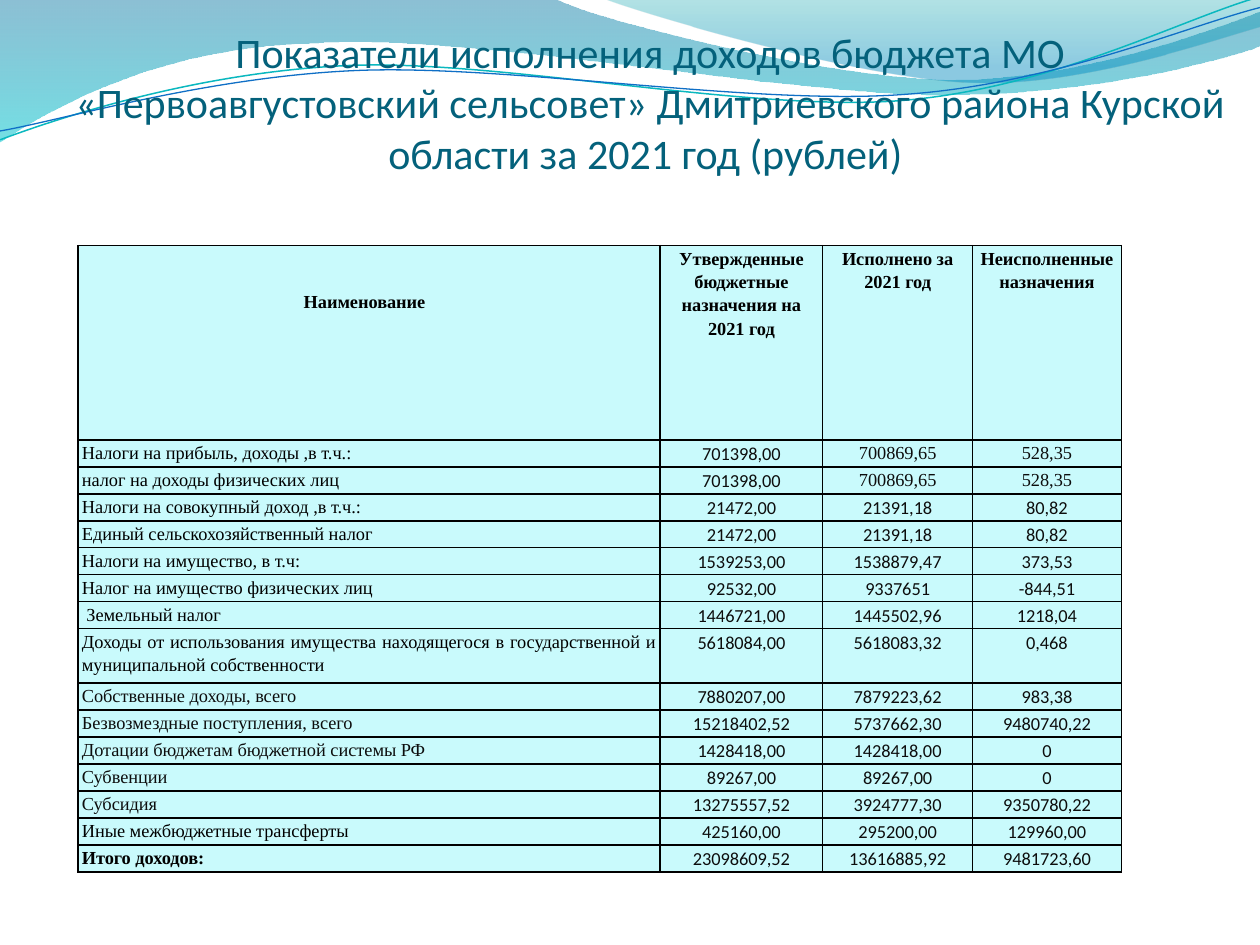
from lxml.etree import SubElement
from math import cos, radians, sin
from pptx import Presentation
from pptx.dml.color import RGBColor
from pptx.enum.text import MSO_ANCHOR, PP_ALIGN
from pptx.oxml import parse_xml
from pptx.oxml.ns import nsdecls, qn
from pptx.util import Inches, Pt

SERIF, SANS = "Times New Roman", "Calibri"
BLACK, SOFT_BLACK = "000000", "0D0D0D"
CELL_FILL = "C9FAFC"
TILT = -2.7

TITLE = ("Показатели исполнения доходов бюджета МО «Первоавгустовский сельсовет» "
         "Дмитриевского района Курской области за 2021 год (рублей) ")
COLUMN_WIDTHS = [4.62, 1.29, 1.19, 1.18]
HEADER_HEIGHTS = [0.08, 0.18, 0.39, 0.05]
ROW_HEIGHT, TALL_ROW_HEIGHT = 3 / 14, 0.43
NAME_HEADER = "Наименование  "
VALUE_HEADERS = ["Утвержденные бюджетные назначения на 2021 год",
                 "Исполнено за 2021 год", "Неисполненные назначения"]
LONG_NAME = ("Доходы от использования имущества находящегося в государственной "
             "и муниципальной собственности")
INCOME = [
    ("Налоги на прибыль, доходы ,в т.ч.:", "701398,00", "700869,65", "528,35"),
    ("налог на доходы физических лиц", "701398,00", "700869,65", "528,35"),
    ("Налоги на совокупный доход ,в т.ч.:", "21472,00", "21391,18", "80,82"),
    ("Единый сельскохозяйственный налог", "21472,00", "21391,18", "80,82"),
    ("Налоги на имущество, в т.ч: ", "1539253,00", "1538879,47", "373,53"),
    ("Налог на имущество физических лиц", "92532,00", "9337651", "-844,51"),
    (" Земельный налог", "1446721,00", "1445502,96", "1218,04"),
    (LONG_NAME, "5618084,00", "5618083,32", "0,468"),
    ("Собственные доходы, всего ", "7880207,00", "7879223,62", "983,38"),
    ("Безвозмездные поступления, всего", "15218402,52", "5737662,30", "9480740,22"),
    ("Дотации бюджетам бюджетной системы РФ", "1428418,00", "1428418,00", "0"),
    ("Субвенции", "89267,00", "89267,00", "0"),
    ("Субсидия", "13275557,52", "3924777,30", "9350780,22"),
    ("Иные межбюджетные трансферты", "425160,00", "295200,00", "129960,00"),
    ("Итого доходов: ", "23098609,52", "13616885,92", "9481723,60"),
]
SERIF_VALUE_ROWS = range(0, 2)
SOFT_NAME_ROWS = range(8, 13)

# Waves: a start point, then line ends (x, y) or cubic curves (x1, y1, x2, y2, x, y)
WIDE_WAVE = [(0, 0), (4.4, -0.01), (4.76, 0.17, 6.64, 0.63, 7.58, 0.63),
             (8.53, 0.63, 9.58, 0.26, 10, 0.09), (10.01, 0.36),
             (9.83, 0.44, 8.7, 0.76, 7.46, 0.75), (6.22, 0.75, 3.82, 0.28, 2.57, 0.34),
             (1.29, 0.36, 0.46, 0.83, -0.01, 1.13), (0, 0)]
RIGHT_WAVE = [(4.79, -0.01), (5.09, 0.11, 6.82, 0.62, 7.69, 0.65),
              (8.56, 0.69, 9.61, 0.32, 10, 0.21), (10, 0), (4.79, -0.01)]
TEAL_LINE = [(0, 1.11), (0.48, 0.93, 1.58, 0.57, 2.77, 0.52),
             (3.95, 0.47, 5.93, 0.89, 7.13, 0.8), (8.33, 0.71, 9.38, 0.15, 9.98, -0.02)]
BLUE_LINE = [(0, 1.04), (0.47, 0.96, 1.64, 0.61, 2.83, 0.56),
             (4.03, 0.51, 5.97, 0.84, 7.17, 0.75), (8.36, 0.67, 9.41, 0.21, 10, 0.06)]


def color(value):
    return RGBColor.from_string(value)


def turn(segment, angle, center):
    turned = []
    for x, y in zip(segment[::2], segment[1::2]):
        across, down = x - center[0], y - center[1]
        turned += [center[0] + across * cos(angle) - down * sin(angle),
                   center[1] + across * sin(angle) + down * cos(angle)]
    return turned


def add_wave(page, segments, closed):
    segments = [[Inches(value) for value in segment] for segment in segments]
    ends = [segment[-2:] for segment in segments]
    builder = page.shapes.build_freeform(*ends[0])
    builder.add_line_segments(ends[1:], close=closed)
    wave = builder.convert_to_shape()
    wave.shadow.inherit = False
    # Freeforms have straight sides only, so the curves are put in here
    sides = wave.element.spPr.findall(".//" + qn("a:lnTo"))
    for side, segment in zip(sides, segments[1:]):
        if len(segment) == 6:
            curve = parse_xml(f'<a:cubicBezTo {nsdecls("a")}/>')
            for x, y in zip(segment[::2], segment[1::2]):
                SubElement(curve, qn("a:pt"), x=str(x - wave.left), y=str(y - wave.top))
            side.getparent().replace(side, curve)
    return wave


def add_filled_wave(page, segments, stops):
    wave = add_wave(page, segments, closed=True)
    wave.line.fill.background()
    wave.fill.gradient()
    wave.fill.gradient_angle = 270
    for stop, (position, value, _) in zip(wave.fill.gradient_stops, stops):
        stop.position = position
        stop.color.rgb = color(value)
    # Opacity has no public method
    tints = wave.element.spPr.findall(".//" + qn("a:srgbClr"))
    for tint, (_, _, opacity) in zip(tints, stops):
        SubElement(tint, qn("a:alpha"), val=str(opacity * 1000))


def add_line_wave(page, segments, center, value, width):
    level = [turn(segment, radians(-TILT), center) for segment in segments]
    wave = add_wave(page, level, closed=False)
    wave.rotation = TILT
    wave.fill.background()
    wave.line.color.rgb = color(value)
    wave.line.width = Pt(width)


def write_text(frame, text, size=10.5, font=SERIF, value=BLACK, bold=False,
               align=PP_ALIGN.CENTER, spacing=None):
    para = frame.paragraphs[0]
    para.alignment = align
    para.line_spacing = spacing
    span = para.add_run()
    span.text = text
    span.font.size = Pt(size)
    span.font.name = font
    span.font.bold = bold
    span.font.color.rgb = color(value)


def add_title(page):
    box = page.shapes.add_textbox(Inches(0.55), Inches(0.78), Inches(9.22), Inches(0.63))
    frame = box.text_frame
    frame.word_wrap = True
    frame.vertical_anchor = MSO_ANCHOR.BOTTOM
    frame.margin_left = frame.margin_right = frame.margin_bottom = 0
    frame.margin_top = Inches(0.05)
    write_text(frame, TITLE, size=24, font=SANS, value="04617B")


def style_cell(cell, sides="LRTB"):
    cell.margin_left = cell.margin_right = Inches(0.03)
    cell.margin_top = cell.margin_bottom = 0
    cell.fill.solid()
    cell.fill.fore_color.rgb = color(CELL_FILL)
    solid = f'<a:solidFill><a:srgbClr val="{BLACK}"/></a:solidFill>'
    properties = cell._tc.get_or_add_tcPr()
    for index, side in enumerate("LRTB"):
        paint = solid if side in sides else "<a:noFill/>"
        properties.insert(index, parse_xml(
            f'<a:ln{side} {nsdecls("a")} w="{Pt(1)}">{paint}</a:ln{side}>'))


def fill_header(table):
    last = len(HEADER_HEIGHTS) - 1
    for row in range(last + 1):
        sides = "LR" + ("T" if row == 0 else "") + ("B" if row == last else "")
        for column in range(len(COLUMN_WIDTHS)):
            cell = table.cell(row, column)
            style_cell(cell, sides if column == 0 else "LRTB")
            if (row != 2 if column == 0 else row > 0):
                para = cell.text_frame.paragraphs[0]
                SubElement(para._p, qn("a:endParaRPr"), sz="1000")
    write_text(table.cell(2, 0).text_frame, NAME_HEADER, bold=True, spacing=1.15)
    for column, header in enumerate(VALUE_HEADERS, start=1):
        table.cell(0, column).merge(table.cell(last, column))
        write_text(table.cell(0, column).text_frame, header, bold=True, spacing=1.15)


def fill_income(table):
    for index, (name, *values) in enumerate(INCOME):
        cells = table.rows[len(HEADER_HEIGHTS) + index].cells
        for cell in cells:
            style_cell(cell)
        write_text(cells[0].text_frame, name, bold=index == len(INCOME) - 1,
                   value=SOFT_BLACK if index in SOFT_NAME_ROWS else BLACK,
                   align=PP_ALIGN.JUSTIFY, spacing=1.15)
        for column, number in enumerate(values, start=1):
            serif = index in SERIF_VALUE_ROWS and column > 1
            write_text(cells[column].text_frame, number, value=SOFT_BLACK,
                       font=SERIF if serif else SANS, spacing=1.15)


def add_income_table(page):
    heights = HEADER_HEIGHTS + [TALL_ROW_HEIGHT if row[0] == LONG_NAME else ROW_HEIGHT
                                for row in INCOME]
    table = page.shapes.add_table(
        len(heights), len(COLUMN_WIDTHS), Inches(0.62), Inches(1.95),
        Inches(sum(COLUMN_WIDTHS)), Inches(sum(heights))).table
    table.first_row = table.horz_banding = False
    for column, width in zip(table.columns, COLUMN_WIDTHS):
        column.width = Inches(width)
    for row, height in zip(table.rows, heights):
        row.height = Inches(height)
    fill_header(table)
    fill_income(table)


def main():
    deck = Presentation()
    deck.slide_width, deck.slide_height = Inches(10), Inches(7.5)
    page = deck.slides.add_slide(deck.slide_layouts[6])
    page.background.fill.solid()
    page.background.fill.fore_color.rgb = color("FFFFFF")
    # Decorative waves
    add_filled_wave(page, WIDE_WAVE, [(0, "0074A1", 45), (1, "00C6CF", 55)])
    add_filled_wave(page, RIGHT_WAVE, [(0, "00A1A9", 30), (0.8, "008BBF", 45)])
    add_line_wave(page, TEAL_LINE, (4.99, 0.58), "0AB8BF", 0.85)
    add_line_wave(page, BLUE_LINE, (5, 0.59), "0F6FC6", 0.75)
    # Content
    add_title(page)
    add_income_table(page)
    deck.save("out.pptx")


if __name__ == "__main__":
    main()
